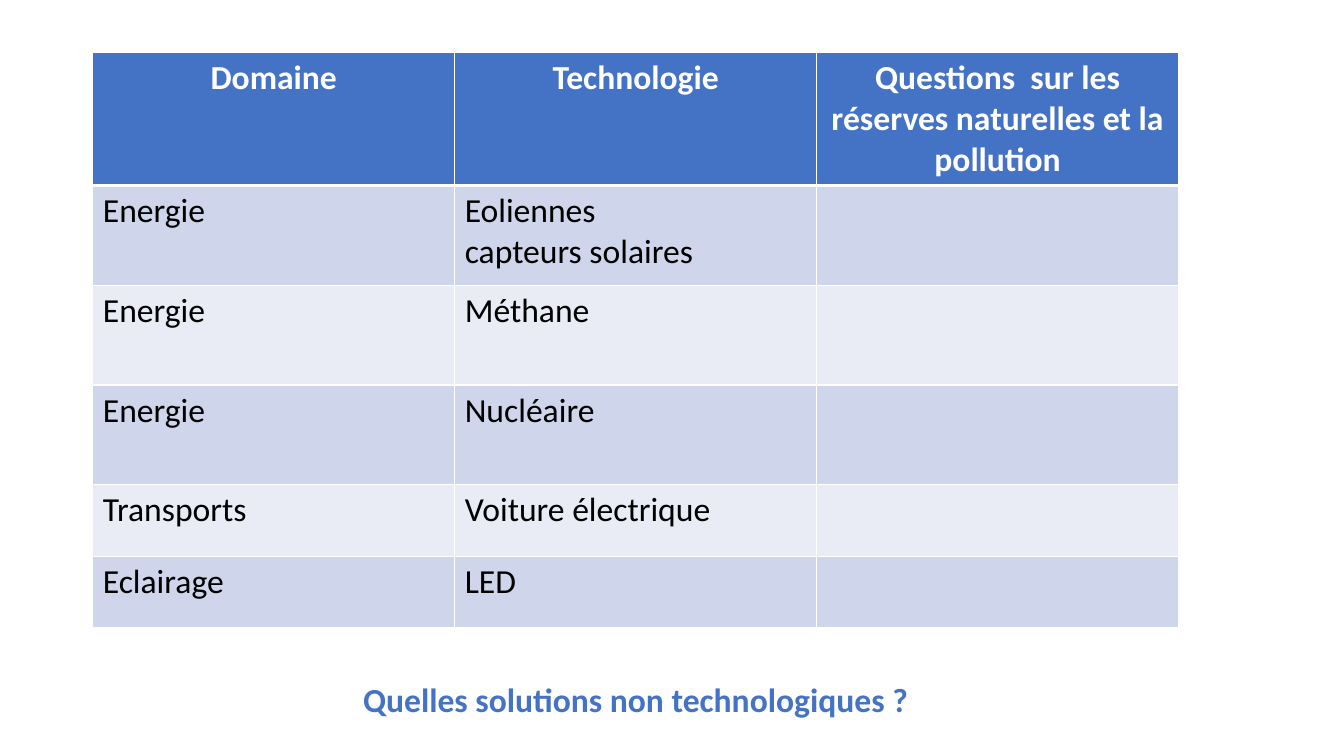
from lxml import etree
from pptx import Presentation
from pptx import util as u
from pptx.dml.color import RGBColor
from pptx.enum import text
from pptx.oxml import ns

BLUE = RGBColor(0x44, 0x72, 0xC4)
BAND_DARK = RGBColor(0xCF, 0xD5, 0xEA)
BAND_LIGHT = RGBColor(0xE9, 0xEB, 0xF5)
WHITE = RGBColor(0xFF, 0xFF, 0xFF)
BLACK = RGBColor(0x00, 0x00, 0x00)

LEFT, WIDTH = 0.92, 10.77
HEADER = ["Domaine", "Technologie", "Questions  sur les réserves naturelles et la pollution"]
ROWS = [
    ["Energie", "Eoliennes\ncapteurs solaires", ""],
    ["Energie", "Méthane", ""],
    ["Energie", "Nucléaire", ""],
    ["Transports", "Voiture électrique", ""],
    ["Eclairage", "LED", ""],
]
ROW_HEIGHTS = [1.3, 0.99, 0.99, 0.99, 0.71, 0.71]


class SlideBuilder:
    """Holds the text style and the current slide."""

    base_font = {"name": "Calibri", "size": u.Pt(24), "bold": False}

    def __init__(self, slide):
        self.slide = slide

    def fill_text(self, frame, content, align, color, **font):
        frame.text = content
        for para in frame.paragraphs:
            para.alignment = align
            for span in para.runs:
                span.font.color.rgb = color
                for key, value in {**self.base_font, **font}.items():
                    setattr(span.font, key, value)

    def border(self, cell, widths):
        properties = cell._tc.get_or_add_tcPr()
        for index, (side, points) in enumerate(widths.items()):
            line = etree.Element(ns.qn(f"a:ln{side}"), w=str(u.Pt(points)))
            fill = etree.SubElement(line, ns.qn("a:solidFill"))
            etree.SubElement(fill, ns.qn("a:srgbClr"), val=str(WHITE))
            properties.insert(index, line)

    def table(self, left, top, width, heights, rows):
        columns = len(rows[0])
        table = self.slide.shapes.add_table(
            len(rows), columns, u.Inches(left), u.Inches(top),
            u.Inches(width), u.Inches(sum(heights))).table
        for column in table.columns:
            column.width = u.Inches(width / columns)
        for index, (height, contents) in enumerate(zip(heights, rows)):
            table.rows[index].height = u.Inches(height)
            header = index == 0
            band = BLUE if header else BAND_DARK if index % 2 else BAND_LIGHT
            align = text.PP_ALIGN.CENTER if header else text.PP_ALIGN.LEFT
            widths = {"L": 1, "R": 1, "T": 3 if index == 1 else 1, "B": 3 if header else 1}
            for cell, content in zip(table.rows[index].cells, contents):
                cell.fill.solid()
                cell.fill.fore_color.rgb = band
                self.border(cell, widths)
                self.fill_text(cell.text_frame, content, align,
                               WHITE if header else BLACK, bold=header)

    def text_box(self, left, top, width, height, content, color, **font):
        box = self.slide.shapes.add_textbox(*map(u.Inches, (left, top, width, height)))
        box.text_frame.word_wrap = True
        box.text_frame.auto_size = text.MSO_AUTO_SIZE.SHAPE_TO_FIT_TEXT
        self.fill_text(box.text_frame, content, text.PP_ALIGN.CENTER, color, **font)


def main():
    deck = Presentation()
    deck.slide_width, deck.slide_height = u.Inches(13.33), u.Inches(7.5)
    page = SlideBuilder(deck.slides.add_slide(deck.slide_layouts[6]))

    # Technologies by domain
    page.table(LEFT, 0.52, WIDTH, ROW_HEIGHTS, [HEADER] + ROWS)

    # Closing question
    page.text_box(LEFT, 6.69, WIDTH, 0.5, "Quelles solutions non technologiques ?",
                  BLUE, bold=True)

    deck.save("out.pptx")


if __name__ == "__main__":
    main()
